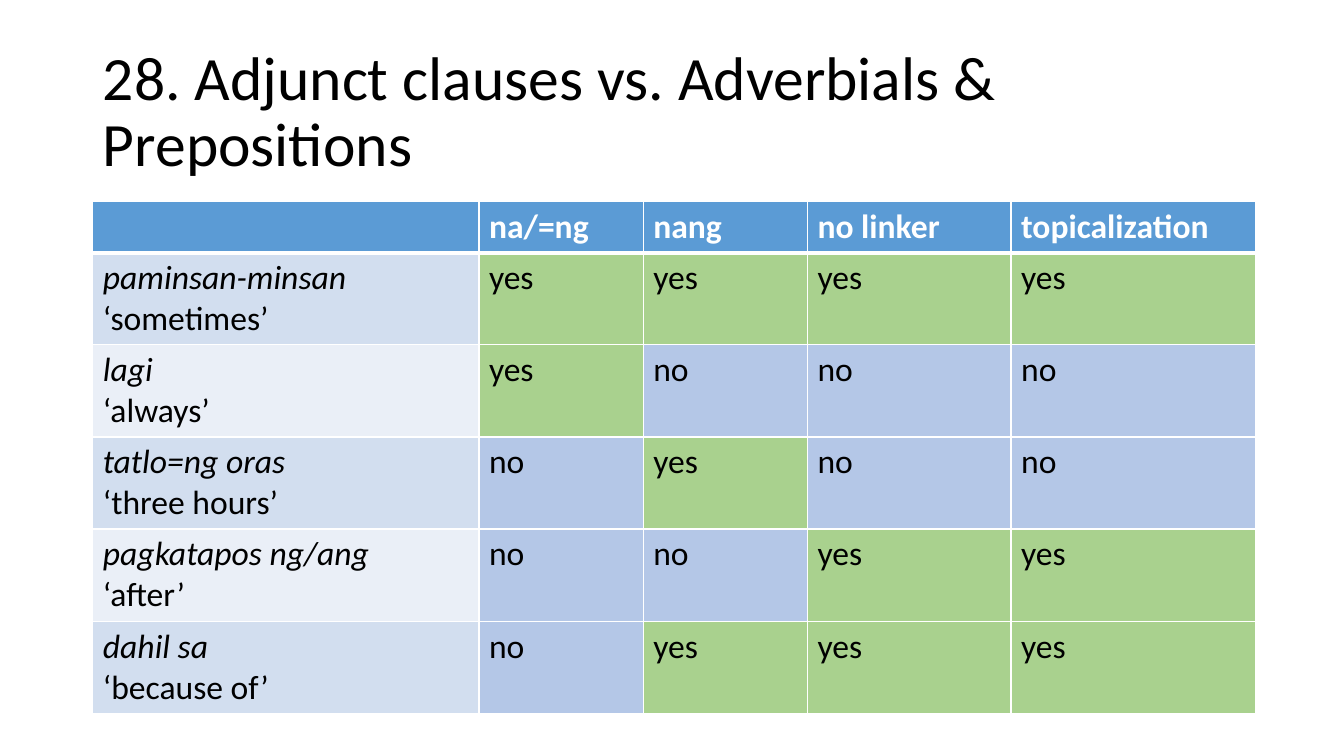
import dataclasses

import lxml.etree
import pptx
import pptx.dml.color
import pptx.enum.text
import pptx.oxml.ns
import pptx.table
import pptx.text.text
import pptx.util

Cm = pptx.util.Cm
Pt = pptx.util.Pt
RGBColor = pptx.dml.color.RGBColor

BLACK = RGBColor(0x00, 0x00, 0x00)
WHITE = RGBColor(0xFF, 0xFF, 0xFF)
HEADER_BLUE = RGBColor(0x5B, 0x9B, 0xD5)
BANDS = (RGBColor(0xD2, 0xDE, 0xEF), RGBColor(0xEA, 0xEF, 0xF7))
ANSWER_FILLS = {
    "yes": RGBColor(0xA9, 0xD1, 0x8E),
    "no": RGBColor(0xB4, 0xC7, 0xE7),
}

FONT = "Calibri"
LEFT = Cm(2.34)
COLUMN_WIDTHS = (Cm(9.73), Cm(4.14), Cm(4.14), Cm(5.13), Cm(6.15))
HEADER_HEIGHT = Cm(1.25)
ROW_HEIGHT = Cm(2.18)
THIN, THICK = Pt(1), Pt(3)


@dataclasses.dataclass(frozen=True)
class Expression:
    tagalog: str
    gloss: str
    answers: tuple[str, ...]


HEADINGS = ("", "na/=ng", "nang", "no linker", "topicalization")
EXPRESSIONS = (
    Expression("paminsan-minsan", "‘sometimes’", ("yes", "yes", "yes", "yes")),
    Expression("lagi", "‘always’", ("yes", "no", "no", "no")),
    Expression("tatlo=ng oras", "‘three hours’", ("no", "yes", "no", "no")),
    Expression("pagkatapos ng/ang", "‘after’", ("no", "no", "yes", "yes")),
    Expression("dahil sa", "‘because of’", ("no", "yes", "yes", "yes")),
)


def write(
    para: pptx.text.text._Paragraph,
    text: str,
    *,
    size: int = 24,
    color: RGBColor = BLACK,
    bold: bool = False,
    italic: bool = False,
) -> None:
    span = para.add_run()
    span.text = text
    span.font.name = FONT
    span.font.size = Pt(size)
    span.font.color.rgb = color
    span.font.bold = bold
    span.font.italic = italic


def style_cell(cell: pptx.table._Cell, fill: RGBColor, top: int = THIN, bottom: int = THIN) -> None:
    """Fill the cell and rule its four sides in white."""
    cell.fill.solid()
    cell.fill.fore_color.rgb = fill
    properties = cell._tc.get_or_add_tcPr()
    qn = pptx.oxml.ns.qn
    sides = {"a:lnL": THIN, "a:lnR": THIN, "a:lnT": top, "a:lnB": bottom}
    for position, (tag, width) in enumerate(sides.items()):
        line = lxml.etree.Element(qn(tag), w=str(int(width)))
        paint = lxml.etree.SubElement(line, qn("a:solidFill"))
        lxml.etree.SubElement(paint, qn("a:srgbClr"), val=str(WHITE))
        properties.insert(position, line)


def add_title(slide: pptx.slide.Slide, text: str) -> None:
    box = slide.shapes.title
    box.left, box.top, box.width, box.height = LEFT, Cm(1.02), Cm(29.21), Cm(3.68)
    frame = box.text_frame
    frame.word_wrap = True
    frame.auto_size = pptx.enum.text.MSO_AUTO_SIZE.NONE
    frame.vertical_anchor = pptx.enum.text.MSO_ANCHOR.MIDDLE
    para = frame.paragraphs[0]
    para.alignment = pptx.enum.text.PP_ALIGN.LEFT
    para.line_spacing = 0.9
    write(para, text, size=44)


def add_answer_table(slide: pptx.slide.Slide) -> None:
    height = HEADER_HEIGHT + ROW_HEIGHT * len(EXPRESSIONS)
    table = slide.shapes.add_table(
        len(EXPRESSIONS) + 1, len(HEADINGS), LEFT, Cm(5.08), sum(COLUMN_WIDTHS), height
    ).table
    for column, width in zip(table.columns, COLUMN_WIDTHS):
        column.width = width
    for index, row in enumerate(table.rows):
        row.height = ROW_HEIGHT if index else HEADER_HEIGHT

    for column, heading in enumerate(HEADINGS):
        cell = table.cell(0, column)
        style_cell(cell, HEADER_BLUE, bottom=THICK)
        if heading:
            write(cell.text_frame.paragraphs[0], heading, color=WHITE, bold=True)

    for index, expression in enumerate(EXPRESSIONS):
        top = THIN if index else THICK
        label = table.cell(index + 1, 0)
        style_cell(label, BANDS[index % 2], top=top)
        write(label.text_frame.paragraphs[0], expression.tagalog, italic=True)
        write(label.text_frame.add_paragraph(), expression.gloss)
        for column, answer in enumerate(expression.answers, start=1):
            cell = table.cell(index + 1, column)
            style_cell(cell, ANSWER_FILLS[answer], top=top)
            write(cell.text_frame.paragraphs[0], answer)


def main() -> None:
    deck = pptx.Presentation()
    deck.slide_width, deck.slide_height = Cm(33.87), Cm(19.05)
    slide = deck.slides.add_slide(deck.slide_layouts.get_by_name("Title Only"))
    add_title(slide, "28. Adjunct clauses vs. Adverbials & Prepositions")
    add_answer_table(slide)
    deck.save("out.pptx")


if __name__ == "__main__":
    main()
